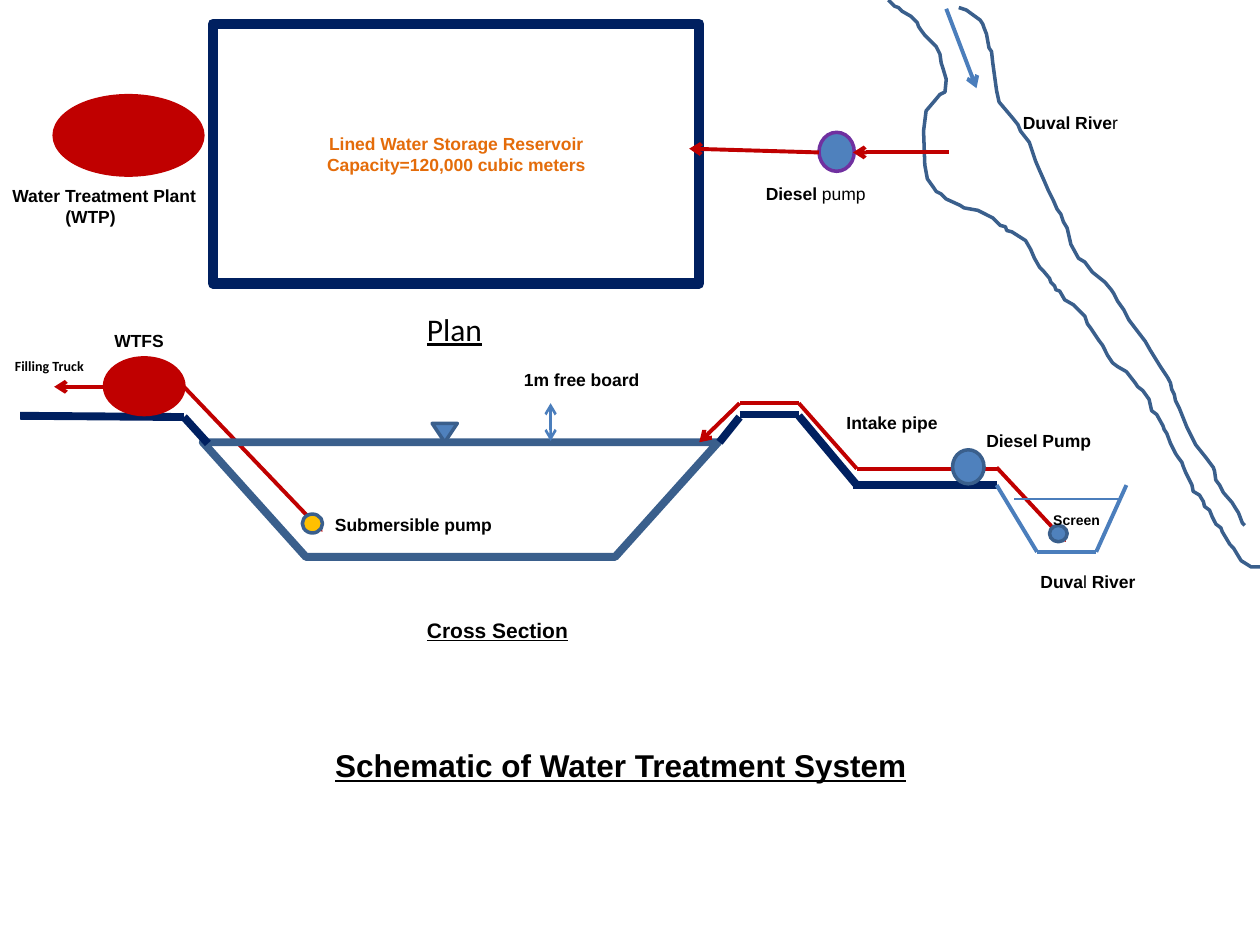
from lxml import etree
from pptx import Presentation
from pptx.dml.color import RGBColor
from pptx.enum.shapes import MSO_CONNECTOR, MSO_SHAPE
from pptx.enum.text import MSO_ANCHOR, MSO_AUTO_SIZE, PP_ALIGN
from pptx.oxml.ns import qn
from pptx.util import Emu, Pt

PX = 9144  # 100 px to the inch
NAVY = RGBColor(0x00, 0x20, 0x60)
RED = RGBColor(0xC0, 0x00, 0x00)
BLUE = RGBColor(0x4F, 0x81, 0xBD)
FLOW_BLUE = RGBColor(0x4B, 0x7E, 0xBC)
DARK_BLUE = RGBColor(0x3A, 0x5F, 0x8C)
PURPLE = RGBColor(0x70, 0x30, 0xA0)
YELLOW = RGBColor(0xFF, 0xC0, 0x00)
ORANGE = RGBColor(0xE4, 0x6C, 0x0A)
BLACK = RGBColor(0x00, 0x00, 0x00)

RIGHT_BANK = [
    (761, 6), (767, 8), (778, 16), (780, 19), (781, 22), (783, 27), (785, 38),
    (787, 41), (788, 50), (791, 72), (793, 81), (804, 94), (808, 99), (810, 104),
    (817, 113), (820, 122), (822, 128), (825, 135), (829, 144), (832, 151),
    (836, 159), (839, 166), (842, 170), (844, 176), (847, 181), (850, 194),
    (856, 205), (861, 208), (864, 212), (867, 216), (877, 224), (882, 230),
    (884, 233), (887, 239), (892, 246), (896, 254), (909, 271), (913, 278),
    (921, 291), (927, 300), (929, 304), (930, 309), (932, 313), (933, 318),
    (936, 324), (942, 339), (949, 353), (957, 363), (963, 371), (964, 374),
    (965, 381), (968, 385), (971, 391), (978, 399), (981, 404), (983, 407),
    (986, 415), (988, 417),
]
LEFT_BANK = [
    (705, 0), (710, 5), (713, 6), (716, 9), (723, 13), (728, 18), (729, 21),
    (731, 24), (734, 28), (737, 31), (740, 34), (743, 37), (746, 43), (747, 50),
    (748, 53), (751, 63), (750, 73), (746, 75), (741, 81), (735, 88), (733, 104),
    (734, 131), (736, 142), (741, 149), (743, 152), (747, 154), (751, 158),
    (762, 163), (765, 165), (776, 167), (780, 169), (788, 173), (794, 179),
    (798, 180), (799, 183), (803, 184), (814, 191), (818, 198), (821, 205),
    (825, 212), (828, 215), (833, 221), (834, 224), (837, 227), (838, 230),
    (841, 231), (845, 238), (852, 242), (861, 251), (863, 257), (866, 261),
    (872, 270), (875, 274), (879, 282), (881, 285), (883, 288), (887, 291),
    (894, 295), (901, 304), (903, 307), (907, 310), (912, 317), (914, 326),
    (918, 329), (923, 338), (924, 341), (926, 344), (929, 352), (933, 360),
    (935, 363), (938, 367), (939, 370), (941, 375), (946, 385), (947, 390),
    (952, 393), (955, 398), (956, 402), (960, 405), (962, 410), (965, 416),
    (969, 419), (970, 422), (976, 432), (979, 435), (985, 445), (993, 450),
    (1000, 450),
]


class Schematic:
    def __init__(self, slide, font="Arial", size=10):
        self.slide, self.shapes = slide, slide.shapes
        self.font, self.size = font, size

    def paint(self, shape, fill, line, weight):
        shape.shadow.inherit = False
        if fill is None:
            shape.fill.background()
        else:
            shape.fill.solid()
            shape.fill.fore_color.rgb = fill
        shape.line.color.rgb = line
        shape.line.width = Pt(weight)

    def shape(self, kind, box, fill, line, weight=2):
        item = self.shapes.add_shape(kind, *(Emu(v * PX) for v in box))
        self.paint(item, fill, line, weight)
        return item

    def bank(self, points):
        builder = self.shapes.build_freeform(*points[0], scale=PX)
        builder.add_line_segments(points[1:], close=False)
        self.paint(builder.convert_to_shape(), None, DARK_BLUE, 2)

    def line(self, start, end, color, weight=2.25, ends=()):
        item = self.shapes.add_connector(
            MSO_CONNECTOR.STRAIGHT, *(Emu(v * PX) for v in start + end))
        item.line.color.rgb = color
        item.line.width = Pt(weight)
        outline = item.line._get_or_add_ln()
        for end_tag in ends:
            etree.SubElement(outline, qn(f"a:{end_tag}"), type="arrow")
        etree.SubElement(item._element.spPr, qn("a:effectLst"))

    def arrow(self, start, end, color=RED):
        self.line(start, end, color, ends=("tailEnd",))

    def format(self, frame, color=BLACK, size=None, font=None, underline=None):
        for paragraph in frame.paragraphs:
            for run in paragraph.runs:
                run.font.name = font or self.font
                run.font.size = Pt(size or self.size)
                run.font.color.rgb = color
                run.font.underline = underline

    def label(self, box, *parts, wrap=False, bold=True, **style):
        """Parts alternate between bold and regular weight."""
        frame = self.shapes.add_textbox(*(Emu(v * PX) for v in box)).text_frame
        frame.word_wrap = wrap
        frame.auto_size = MSO_AUTO_SIZE.SHAPE_TO_FIT_TEXT
        frame.text = parts[0]
        for part in parts[1:]:
            frame.paragraphs[0].add_run().text = part
        for paragraph in frame.paragraphs:
            for i, run in enumerate(paragraph.runs):
                run.font.bold = bold and i % 2 == 0
        self.format(frame, **style)
        return frame

    def title(self, box, text):
        title = self.shapes.title
        title.left, title.top, title.width, title.height = (Emu(v * PX) for v in box)
        frame = title.text_frame
        frame.text = text
        frame.word_wrap = False
        frame.auto_size = MSO_AUTO_SIZE.SHAPE_TO_FIT_TEXT
        frame.vertical_anchor = MSO_ANCHOR.TOP
        frame.paragraphs[0].alignment = PP_ALIGN.LEFT
        self.format(frame, size=18, underline=True)
        frame.paragraphs[0].runs[0].font.bold = True


def draw_plan(art):
    # Reservoir and treatment plant
    reservoir = art.shape(MSO_SHAPE.RECTANGLE, (169, 19, 386, 206), None, NAVY, 6)
    frame = reservoir.text_frame
    frame.text = "Lined Water Storage Reservoir\nCapacity=120,000 cubic meters"
    frame.vertical_anchor = MSO_ANCHOR.MIDDLE
    for paragraph in frame.paragraphs:
        paragraph.alignment = PP_ALIGN.CENTER
        paragraph.runs[0].font.bold = True
    art.format(frame, color=ORANGE)
    art.shape(MSO_SHAPE.OVAL, (43, 76, 118, 63), RED, RED)
    plant = art.label((0, 142, 169, 44), "Water Treatment Plant\n(WTP)", wrap=True)
    plant.paragraphs[1]._p.get_or_add_pPr().set("marL", str(42 * PX))

    # River, pump and intake flow
    art.shape(MSO_SHAPE.OVAL, (650, 105, 28, 31), BLUE, PURPLE)
    art.bank(RIGHT_BANK)
    art.bank(LEFT_BANK)
    art.arrow((751, 7), (775, 70), FLOW_BLUE)
    art.arrow((753, 121), (677, 121))
    art.arrow((650, 121), (547, 118))
    art.label((598, 140, 100, 27), "Diesel", " pump")
    art.label((802, 84, 96, 27), "Duval Rive", "r")
    art.label((329, 241, 64, 40), "Plan", bold=False,
              size=18, font="Calibri", underline=True)


def draw_cross_section(art):
    # Ground surface
    for start, end in [((16, 330), (146, 331)), ((587, 329), (634, 329)),
                       ((634, 330), (680, 385)), ((677, 385), (791, 385))]:
        art.line(start, end, NAVY, 4.5)

    # Filling station, basin and embankments
    art.shape(MSO_SHAPE.OVAL, (83, 284, 63, 45), RED, RED)
    art.arrow((146, 307), (256, 422))
    art.shape(MSO_SHAPE.FLOWCHART_MANUAL_OPERATION, (161, 351, 409, 91),
              None, DARK_BLUE, 4.5)
    art.line((571, 351), (587, 331), NAVY, 4.5)
    art.line((165, 352), (146, 331), NAVY, 4.5)
    art.arrow((83, 307), (43, 307))

    # Intake pipe
    pipe = [(758, 372), (680, 372), (634, 320), (587, 320)]
    for start, end in zip(pipe, pipe[1:]):
        art.line(start, end, RED)
    art.arrow(pipe[-1], (555, 351))
    art.line((773, 372), (791, 372), RED)

    # River channel and water level
    channel = [(791, 385), (823, 438), (870, 438), (894, 385)]
    for start, end in zip(channel, channel[1:]):
        art.line(start, end, FLOW_BLUE)
    art.arrow((791, 371), (846, 430))
    art.line((805, 396), (888, 396), FLOW_BLUE, 0.75)

    # Pumps, screen and level marker
    art.shape(MSO_SHAPE.FLOWCHART_MERGE, (343, 336, 20, 15), BLUE, DARK_BLUE)
    for box, fill in [((756, 357, 25, 27), BLUE), ((240, 408, 16, 15), YELLOW),
                      ((833, 417, 14, 13), BLUE)]:
        art.shape(MSO_SHAPE.OVAL, box, fill, DARK_BLUE)
    art.line((437, 320), (437, 350), FLOW_BLUE, 1.5, ("headEnd", "tailEnd"))

    # Labels
    art.label((662, 322, 96, 27), "Intake pipe", wrap=True)
    art.label((773, 336, 104, 27), "Diesel Pump")
    art.label((256, 403, 146, 27), "Submersible pump")
    art.label((81, 257, 60, 27), "WTFS")
    art.label((816, 448, 96, 27), "Duva", "l ", "River")
    art.label((406, 288, 113, 27), "1m free board")
    art.label((329, 485, 133, 30), "Cross Section", size=12, underline=True)
    art.label((2, 279, 76, 24), "Filling Truck", size=8, font="Calibri")
    art.label((826, 401, 58, 24), "Screen", size=8)


def main():
    deck = Presentation()
    deck.slide_width, deck.slide_height = Emu(1000 * PX), Emu(750 * PX)
    art = Schematic(deck.slides.add_slide(deck.slide_layouts[5]))
    draw_plan(art)
    draw_cross_section(art)
    art.title((256, 587, 478, 40), "Schematic of Water Treatment System")
    deck.save("out.pptx")


if __name__ == "__main__":
    main()
